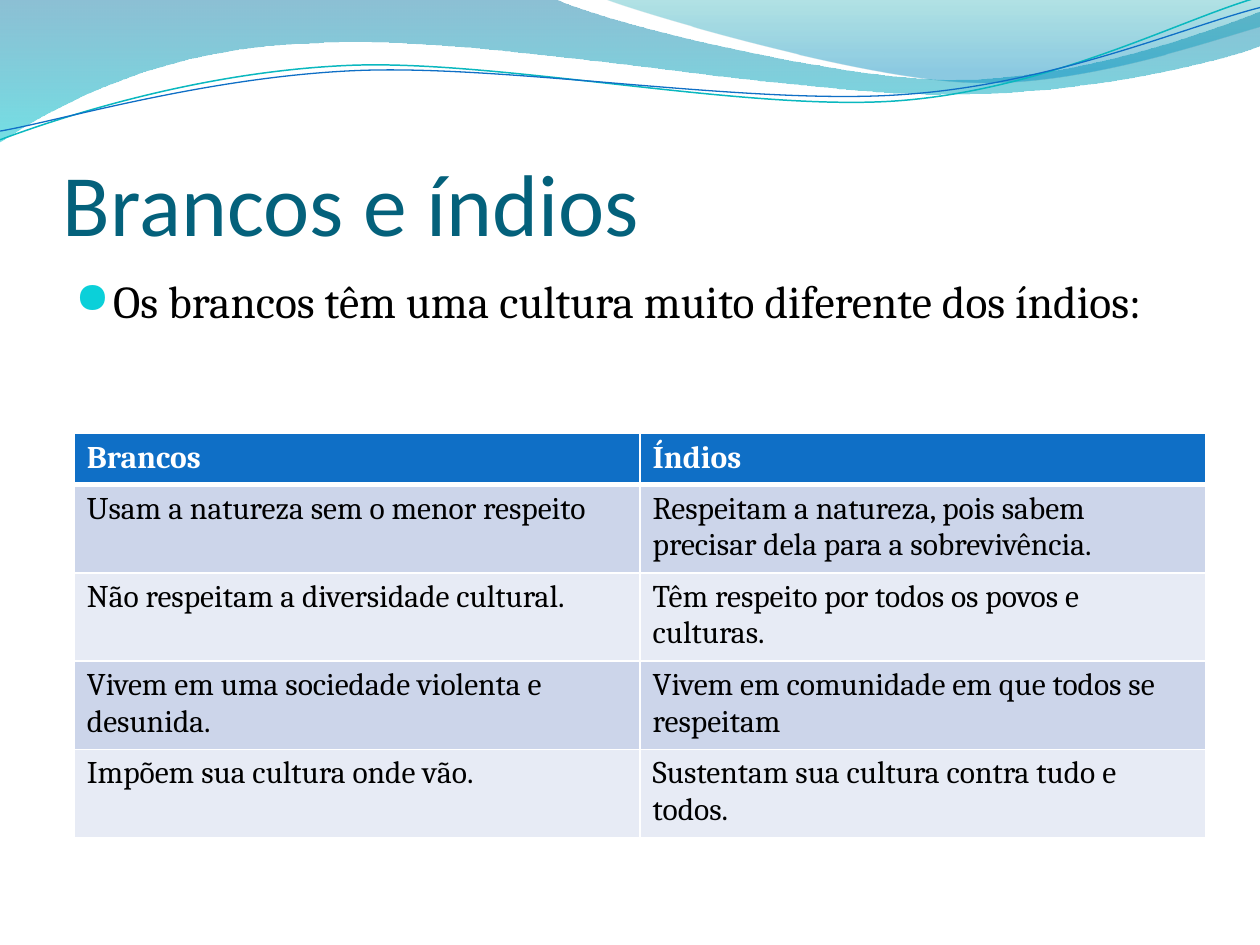
from lxml.etree import SubElement
from pptx import Presentation
from pptx.dml.color import RGBColor
from pptx.enum.text import MSO_ANCHOR as Anchor
from pptx.oxml.ns import qn
from pptx.util import Pt

# Content
TITLE = "Brancos e índios"
INTRO = "Os brancos têm uma cultura muito diferente dos índios:"
ROWS = [
    ("Brancos", "Índios"),
    ("Usam a natureza sem o menor respeito",
     "Respeitam a natureza, pois sabem precisar dela para a sobrevivência."),
    ("Não respeitam a diversidade cultural.",
     "Têm respeito por todos os povos e culturas."),
    ("Vivem em uma sociedade violenta e desunida.",
     "Vivem em comunidade em que todos se respeitam"),
    ("Impõem sua cultura onde vão.",
     "Sustentam sua cultura contra tudo e todos."),
]
HEADER_FILL, BAND_FILLS = "0F6FC6", ("CCD5EA", "E7EBF5")
HEADER_HEIGHT, ROW_HEIGHT, COLUMN_WIDTH = 29.2, 48.6, 323.3

# Waves: a start point, then segments of one point (line) or three (curve).
# Gradient stops are position %, colour, opacity %.
BANDS = [
    ([(0, 0)],
     [[(316.8, -0.7)],
      [(342.7, 12.2), (478.1, 45.4), (545.8, 45.4)],
      [(614.2, 45.4), (689.8, 18.7), (720, 6.5)],
      [(720.7, 25.9)],
      [(707.8, 31.7), (626.4, 54.7), (537.1, 54)],
      [(447.8, 54), (275, 20.2), (185, 24.5)],
      [(92.9, 25.9), (33.1, 59.8), (-0.7, 81.4)]],
     [(0, "0074A1", 45), (100, "00C6CF", 55)]),
    ([(344.9, -0.7)],
     [[(366.5, 7.9), (491, 44.6), (553.7, 46.8)],
      [(616.3, 49.7), (691.9, 23), (720, 15.1)],
      [(720, 0)]],
     [(0, "00A1A9", 30), (80, "008BBF", 45)]),
]
STROKES = [
    ([(0, 79.9)],
     [[(34.6, 67), (113.8, 41), (199.4, 37.4)],
      [(284.4, 33.8), (427, 64.1), (513.4, 57.6)],
      [(599.8, 51.1), (675.4, 10.8), (718.6, -1.4)]],
     "0AB8BF", 0.85),
    ([(0, 74.9)],
     [[(33.8, 69.1), (118.1, 43.9), (203.8, 40.3)],
      [(290.2, 36.7), (429.8, 60.5), (516.2, 54)],
      [(601.9, 48.2), (677.5, 15.1), (720, 4.3)]],
     "0F6FC6", 0.75),
]


def color(value):
    return RGBColor.from_string(value)


def add(parent, tag, **attributes):
    return SubElement(parent, qn(tag), {k: str(v) for k, v in attributes.items()})


def write(frame, text, *, size, font, ink, bold=False):
    para = frame.paragraphs[0]
    span = para.add_run()
    span.text = text
    span.font.size, span.font.name, span.font.bold = Pt(size), font, bold
    span.font.color.rgb = color(ink)
    return para


def add_text(page, left, top, width, height, text, insets, anchor, **style):
    frame = page.shapes.add_textbox(Pt(left), Pt(top), Pt(width), Pt(height)).text_frame
    frame.word_wrap, frame.vertical_anchor = True, anchor
    (frame.margin_left, frame.margin_top,
     frame.margin_right, frame.margin_bottom) = map(Pt, insets)
    return write(frame, text, **style)


def add_wave(page, start, segments, close):
    """Draw through all points, then group each curve's three into a Bézier."""
    (x, y), = start
    builder = page.shapes.build_freeform(Pt(x), Pt(y), scale=1.0)
    points = [(Pt(x), Pt(y)) for segment in segments for x, y in segment]
    builder.add_line_segments(points, close=close)
    shape = builder.convert_to_shape()
    shape.shadow.inherit = False
    nodes = iter(list(shape.element.iter(qn("a:lnTo"))))
    for segment in segments:
        group = [next(nodes) for _ in segment]
        if len(group) == 3:
            curve = group[0].makeelement(qn("a:cubicBezTo"))
            group[0].addprevious(curve)
            for node in group:
                curve.append(node[0])
                node.getparent().remove(node)
    return shape


def fill_gradient(shape, stops):
    shape.fill.gradient()
    gradient = shape.element.spPr.find(qn("a:gradFill"))
    for child in list(gradient):
        gradient.remove(child)
    stop_list = add(gradient, "a:gsLst")
    for position, value, opacity in stops:
        stop = add(stop_list, "a:gs", pos=position * 1000)
        add(add(stop, "a:srgbClr", val=value), "a:alpha", val=opacity * 1000)
    add(gradient, "a:lin", ang=90 * 60000, scaled=1)


def add_bullet(para):
    props = para._p.get_or_add_pPr()
    indent = Pt(21.6)
    props.set("marL", str(indent))
    props.set("indent", str(-indent))
    add(add(props, "a:spcBef"), "a:spcPct", val=20000)
    add(add(props, "a:buClr"), "a:srgbClr", val="0BD0D9")
    add(props, "a:buSzPct", val=95000)
    add(props, "a:buChar", char="●")


def style_cell(cell, fill, borders):
    props = cell._tc.get_or_add_tcPr()
    for tag, width in borders.items():
        line = add(props, tag, w=Pt(width))
        add(add(line, "a:solidFill"), "a:srgbClr", val="FFFFFF")
    cell.fill.solid()
    cell.fill.fore_color.rgb = color(fill)


def add_comparison(page):
    height = HEADER_HEIGHT + ROW_HEIGHT * (len(ROWS) - 1)
    table = page.shapes.add_table(len(ROWS), 2, Pt(42.5), Pt(247.7),
                                  Pt(2 * COLUMN_WIDTH), Pt(height)).table
    for column in table.columns:
        column.width = Pt(COLUMN_WIDTH)
    for r, texts in enumerate(ROWS):
        header = r == 0
        table.rows[r].height = Pt(HEADER_HEIGHT if header else ROW_HEIGHT)
        borders = {"a:lnL": 1, "a:lnR": 1, "a:lnT": 3 if r == 1 else 1,
                   "a:lnB": 3 if header else 1}
        for c, text in enumerate(texts):
            cell = table.cell(r, c)
            style_cell(cell, HEADER_FILL if header else BAND_FILLS[(r - 1) % 2], borders)
            write(cell.text_frame, text, size=18, font="Cambria",
                  ink="FFFFFF" if header else "000000", bold=header)


def main():
    deck = Presentation()
    deck.slide_width, deck.slide_height = Pt(720), Pt(540)
    page = deck.slides.add_slide(deck.slide_layouts[6])

    # Waves along the top
    for start, segments, stops in BANDS:
        band = add_wave(page, start, segments, close=True)
        fill_gradient(band, stops)
        band.line.fill.background()
    for start, segments, ink, width in STROKES:
        stroke = add_wave(page, start, segments, close=False)
        stroke.fill.background()
        stroke.line.color.rgb = color(ink)
        stroke.line.width = Pt(width)

    # Title and introduction
    add_text(page, 36, 55.4, 648, 90, TITLE, (0, 3.6, 0, 0), Anchor.BOTTOM,
             size=50, font="Calibri", ink="04617B")
    intro = add_text(page, 36, 152.6, 648, 345.6, INTRO, (7.2, 3.6, 7.2, 3.6),
                     Anchor.TOP, size=26, font="Cambria", ink="000000")
    add_bullet(intro)

    # Comparison table
    add_comparison(page)
    deck.save("out.pptx")


if __name__ == "__main__":
    main()
